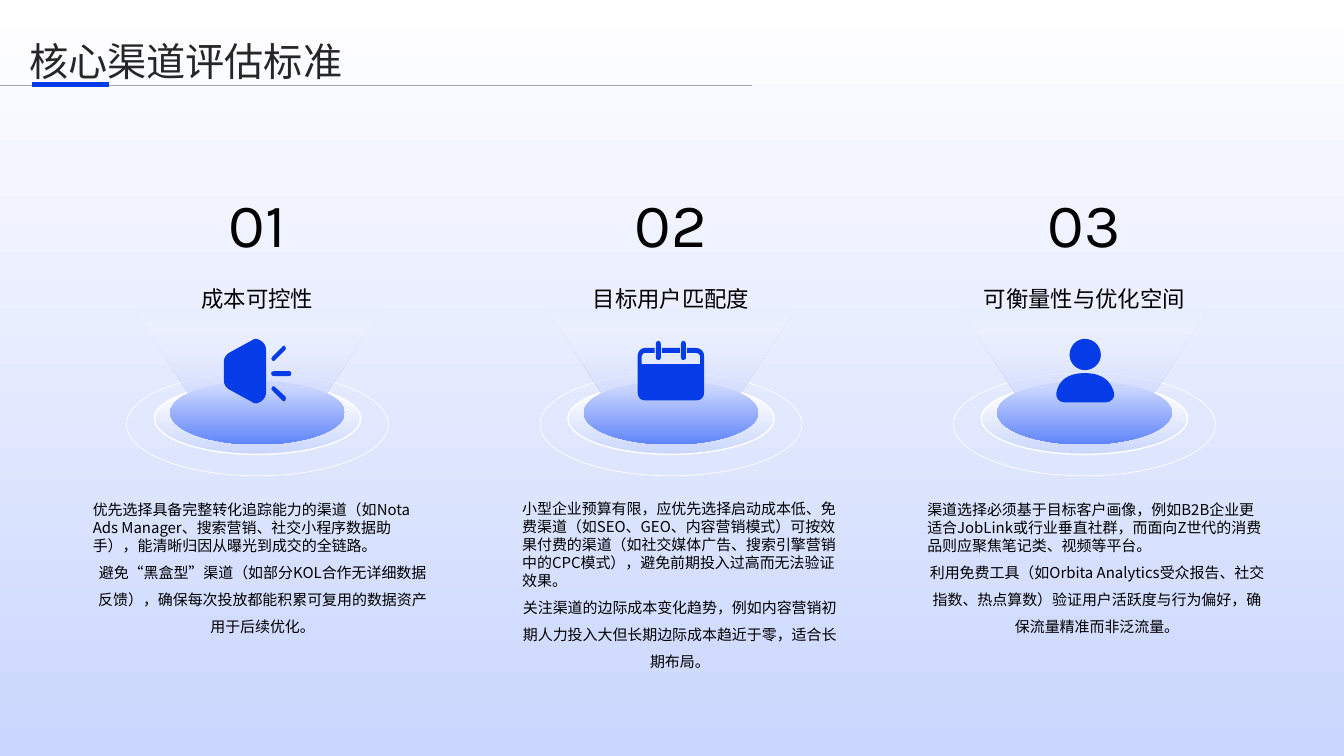
import pptx
import pptx.util
import pptx.dml.color
import pptx.enum.shapes
import pptx.enum.text
import pptx.oxml
import pptx.oxml.ns

Cm, Pt = pptx.util.Cm, pptx.util.Pt
RGB = pptx.dml.color.RGBColor
SHAPE = pptx.enum.shapes.MSO_SHAPE
ALIGN = pptx.enum.text.PP_ALIGN
ANCHOR = pptx.enum.text.MSO_ANCHOR
qn = pptx.oxml.ns.qn

WHITE = RGB(0xFF, 0xFF, 0xFF)
BLACK = RGB(0, 0, 0)
INK = RGB(0x26, 0x26, 0x26)
GREY = RGB(0xA6, 0xA6, 0xA6)
PALE = RGB(0xCA, 0xD6, 0xFE)
MID = RGB(0x60, 0x85, 0xFB)
BLUE = RGB(0x06, 0x3C, 0xE8)
HAN, LATIN = "Noto Sans CJK SC", "Karla"
WIDE, HIGH = 33.87, 19.05
UNIT = 0.0254  # cm per step of an icon path

HORN = """
M 32 0 C 34 0 35 1 37 2 C 40 4 42 7 42 11 L 42 53 C 42 57 40 60 37 62
C 35 63 34 64 32 64 C 30 64 28 63 27 62 L 5 50 C 2 48 0 45 0 41
L 0 23 C 0 19 2 16 5 14 L 27 2 C 28 1 30 0 32 0
M 50 47 C 50 47 51 47 51 48 L 61 57 C 62 58 62 60 61 61 C 61 61 60 62 60 62
C 59 62 58 61 58 61 L 48 51 C 47 50 47 49 48 48 C 48 47 49 47 50 47
M 50 32 L 65 32 C 66 32 67 33 67 34 C 67 36 66 37 65 37
L 50 37 C 48 37 47 36 47 34 C 47 33 48 32 50 32
M 60 7 C 60 7 61 7 61 8 C 62 9 62 10 61 11 L 51 21 C 51 22 50 22 50 22
C 49 22 48 22 48 21 C 47 20 47 19 48 18 L 58 8 C 58 7 59 7 60 7"""
DATES = """
M 24 7 L 42 7 L 42 12 L 24 12
M 7 7 L 17 7 L 17 12 L 7 12 C 6 12 4 13 4 15 L 4 23 L 62 23 L 62 15
C 62 13 60 12 58 12 L 49 12 L 49 7 L 58 7 C 63 7 66 11 66 15 L 66 51
C 66 56 63 59 58 59 L 7 59 C 3 59 0 56 0 51 L 0 15 C 0 11 3 7 7 7
M 45 0 C 47 0 48 1 48 3 L 48 17 C 48 18 47 19 45 19
C 44 19 43 18 43 17 L 43 3 C 43 1 44 0 45 0
M 21 0 C 22 0 23 1 23 3 L 23 17 C 23 18 22 19 21 19
C 19 19 18 18 18 17 L 18 3 C 18 1 19 0 21 0"""
USER = """
M 29 34 C 48 34 55 43 58 53 C 60 58 55 63 50 63 L 9 63
C 3 63 0 58 1 53 C 3 43 10 34 29 34
M 29 0 C 38 0 45 7 45 16 C 45 24 38 31 29 31
C 21 31 14 24 14 16 C 14 7 21 0 29 0"""

# heading, body left, top and width, icon path, left and top, body lines
ITEMS = [
    ("成本可控性", 2.34, 12.62, 8.56, HORN, 5.64, 8.54, (
        "优先选择具备完整转化追踪能力的渠道（如Nota Ads Manager、搜索营销、社交小程序数据助手），能清晰归因从曝光到成交的全链路。",
        "避免“黑盒型”渠道（如部分KOL合作无详细数据反馈），确保每次投放都能积累可复用的数据资产用于后续优化。")),
    ("目标用户匹配度", 13.16, 12.6, 7.95, DATES, 16.07, 8.59, (
        "小型企业预算有限，应优先选择启动成本低、免费渠道（如SEO、GEO、内容营销模式）可按效果付费的渠道（如社交媒体广告、搜索引擎营销中的CPC模式），避免前期投入过高而无法验证效果。",
        "关注渠道的边际成本变化趋势，例如内容营销初期人力投入大但长期边际成本趋近于零，适合长期布局。")),
    ("可衡量性与优化空间", 23.37, 12.62, 8.56, USER, 26.6, 8.54, (
        "渠道选择必须基于目标客户画像，例如B2B企业更适合JobLink或行业垂直社群，而面向Z世代的消费品则应聚焦笔记类、视频等平台。",
        "利用免费工具（如Orbita Analytics受众报告、社交指数、热点算数）验证用户活跃度与行为偏好，确保流量精准而非泛流量。")),
]


class Deck:
    def __init__(self):
        self.prs = pptx.Presentation()
        self.prs.slide_width, self.prs.slide_height = Cm(WIDE), Cm(HIGH)
        self.slide = self.prs.slides.add_slide(self.prs.slide_layouts[5])
        self.shapes = self.slide.shapes

    def style(self, para, size, color, face, align, space):
        para.alignment, para.line_spacing = align, space
        para._p.get_or_add_pPr().set("hangingPunct", "0")
        for run in para.runs:
            font = run.font
            font.size, font.name, font.color.rgb = Pt(size), face, color
            east = pptx.oxml.parse_xml(
                '<a:ea %s typeface="%s"/>' % (pptx.oxml.ns.nsdecls("a"), face))
            run._r.rPr.find(qn("a:latin")).addnext(east)

    def title(self, text):
        box = self.shapes.title
        box.left, box.top = Cm(0.48), Cm(0.69)
        box.width, box.height = Cm(31.78), Cm(1.57)
        frame = box.text_frame
        frame.text = text
        frame.vertical_anchor = ANCHOR.TOP
        frame.auto_size = pptx.enum.text.MSO_AUTO_SIZE.SHAPE_TO_FIT_TEXT
        self.style(frame.paragraphs[0], 28, INK, HAN, ALIGN.LEFT, 1.1)

    def text(self, x, y, w, h, lines, size, face=HAN, anchor=ANCHOR.TOP,
             looks=((ALIGN.CENTER, 1.5),)):
        """Add a text box; looks holds alignment and spacing per line."""
        frame = self.shapes.add_textbox(Cm(x), Cm(y), Cm(w), Cm(h)).text_frame
        frame.word_wrap, frame.vertical_anchor = True, anchor
        frame.margin_left = frame.margin_right = 0
        frame.margin_top = frame.margin_bottom = 0
        frame.text = "\n".join(lines)
        for para, (align, space) in zip(frame.paragraphs, looks):
            self.style(para, size, BLACK, face, align, space)

    def shape(self, kind, x, y, w, h, shades=(), start=0, line=0):
        """Add a shape with a downward gradient and a white line."""
        form = self.shapes.add_shape(kind, Cm(x), Cm(y), Cm(w), Cm(h))
        form.shadow.inherit = False
        if shades:
            form.fill.gradient()
            form.fill.gradient_angle = 270
            for stop, shade, pos in zip(form.fill.gradient_stops, shades, (start, 1)):
                stop.color.rgb, stop.position = shade, pos
        else:
            form.fill.background()
        if line:
            form.line.color.rgb, form.line.width = WHITE, Pt(line)
        else:
            form.line.fill.background()
        return form

    def beam(self, x, y, w, h):
        """Add a flipped trapezoid of light that fades out upwards."""
        form = self.shape(SHAPE.TRAPEZOID, x, y, w, h, (PALE, WHITE), 0.1)
        form.adjustments[0] = 0.655
        form._element.spPr.xfrm.set("flipV", "1")
        last = list(form._element.spPr.iter(qn("a:srgbClr")))[-1]
        last.append(pptx.oxml.parse_xml(
            '<a:alpha %s val="0"/>' % pptx.oxml.ns.nsdecls("a")))

    def icon(self, code, x, y):
        """Draw a path of M, L and C steps as one filled outline."""
        words, kinds, pen = iter(code.split()), [], None
        for step in words:
            pts = [(Cm(int(next(words)) * UNIT), Cm(int(next(words)) * UNIT))
                   for _ in range(3 if step == "C" else 1)]
            if step != "M":
                pen.add_line_segments(pts, close=False)
                kinds.append(step)
            elif pen:
                pen.move_to(*pts[0])
            else:
                pen = self.shapes.build_freeform(*pts[0])
        form = pen.convert_to_shape(Cm(x), Cm(y))
        self.bend(form, kinds)
        form.shadow.inherit = False
        form.fill.solid()
        form.fill.fore_color.rgb = BLUE
        form.line.fill.background()

    def bend(self, form, kinds):
        """Join each three line steps of a C step into one curve, close loops."""
        root = next(form._element.iter(qn("a:pathLst")))[0]
        lines = iter(root.findall(qn("a:lnTo")))
        for kind in kinds:
            first = next(lines)
            if kind == "C":
                curve = root.makeelement(qn("a:cubicBezTo"))
                first.addprevious(curve)
                for part in (first, next(lines), next(lines)):
                    curve.append(part[0])
                    root.remove(part)
        for start in root.findall(qn("a:moveTo"))[1:]:
            start.addprevious(root.makeelement(qn("a:close")))
        root.append(root.makeelement(qn("a:close")))

    def rule(self, x, end, y, color, width):
        line = self.shapes.add_connector(
            pptx.enum.shapes.MSO_CONNECTOR.STRAIGHT, Cm(x), Cm(y), Cm(end), Cm(y))
        line.line.color.rgb, line.line.width = color, Pt(width)
        line._element.spPr.append(pptx.oxml.parse_xml(
            "<a:effectLst %s/>" % pptx.oxml.ns.nsdecls("a")))


def main():
    deck = Deck()
    back = deck.shape(SHAPE.RECTANGLE, 0, 0, WIDE, HIGH, (WHITE, PALE))
    deck.shapes._spTree.insert(2, back._element)
    deck.title("核心渠道评估标准")
    for i, (head, left, top, width, code, x, y, body) in enumerate(ITEMS):
        mid = 6.49 + 10.42 * i
        deck.shape(SHAPE.OVAL, mid - 3.3, 9.4, 6.6, 2.59, line=0.5)
        deck.shape(SHAPE.OVAL, mid - 2.6, 9.65, 5.2, 1.8, (WHITE, PALE), 0.1, 1)
        deck.beam(mid - 3.1, 7.82, 6.2, 2.59)
        deck.shape(SHAPE.OVAL, mid - 2.2, 9.6, 4.4, 1.6, (PALE, MID), 0.1)
        deck.icon(code, x, y)
        deck.text(mid - 3.8, 6.4, 7.6, 1.9, [head], 16, anchor=ANCHOR.MIDDLE)
        deck.text(mid - 3.6, 3.16, 7.2, 3.4, [f"{i + 1:02}"], 44, LATIN,
                  ANCHOR.BOTTOM, ((ALIGN.CENTER, 1.1),))
        deck.text(left, top, width, 4.05, body, 10.7,
                  looks=((ALIGN.LEFT, 1.0), (ALIGN.CENTER, 1.5)))
    deck.rule(0, 18.95, 2.14, GREY, 0.5)
    deck.rule(0.8, 2.75, 2.13, BLUE, 3.5)
    deck.prs.save("out.pptx")


if __name__ == "__main__":
    main()
